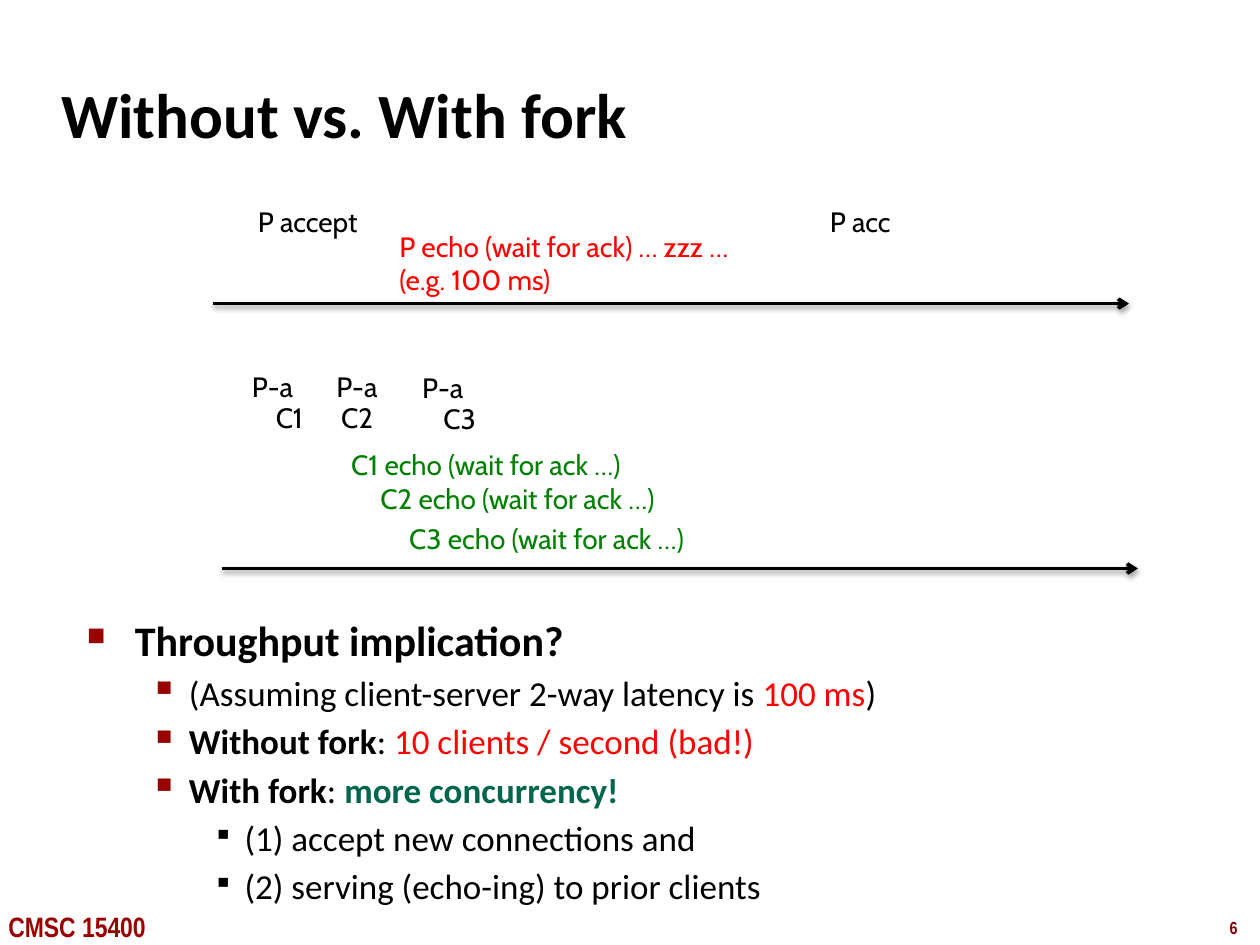
from dataclasses import dataclass
from pptx import Presentation
from pptx.dml.color import RGBColor
from pptx.enum.shapes import MSO_CONNECTOR
from pptx.enum.text import MSO_ANCHOR
from pptx.oxml import parse_xml
from pptx.oxml.ns import nsdecls
from pptx.util import Cm, Pt

BLACK, RED, GREEN = "000000", "FF0000", "008000"
MAROON, TEAL = "990000", "00664D"


@dataclass
class Label:
    text: str
    left: float
    top: float
    width: float
    height: float = 0.94
    color: str = BLACK
    size: float = 16
    font: str = "Cabin"
    bold: bool = False
    wrap: bool = True
    middle: bool = False


@dataclass
class Client:
    name: str
    accept: float
    child: float
    top: float
    echo: float
    low: float


@dataclass
class Level:
    margin: float
    hang: float
    char: str
    scale: int
    size: float
    color: str = BLACK


@dataclass
class Part:
    text: str
    color: str = BLACK
    bold: bool = False


LABELS = [
    Label("6", 24.54, 18.36, 0.86, 0.69, "800000", 10, "Arial Narrow", True, False),
    Label("CMSC 15400", -0.08, 18.21, 3.61, 0.94, MAROON, 16, "Arial Narrow", True, False),
    Label("Without vs. With fork", 0.99, 1.22, 21.08, 2.11, BLACK, 36, "Calibri", True, middle=True),
    Label("P accept", 4.95, 3.99, 3.71),
    Label("P echo (wait for ack) … zzz …\n(e.g. 100 ms)", 7.8, 4.5, 8.76, 1.63, RED),
    Label("P acc", 16.48, 3.99, 4.9),
]
CLIENTS = [
    Client("C1", 4.83, 5.31, 7.32, 6.83, 8.89),
    Client("C2", 6.53, 6.63, 7.32, 7.42, 9.58),
    Client("C3", 8.26, 8.69, 7.35, 8, 10.39),
]
LEVELS = [
    Level(0.97, 0.97, "■", 60, 24, MAROON),
    Level(2.06, 0.79, "▪", 110, 20, MAROON),
    Level(3.18, 0.64, "▪", 80, 20),
]
POINTS = [
    (0, [Part("Throughput implication?", bold=True)]),
    (1, [Part("(Assuming client-server 2-way latency is "), Part("100 ms", RED), Part(")")]),
    (1, [Part("Without fork", bold=True), Part(": "), Part("10 clients / second (bad!)", RED)]),
    (1, [Part("With fork", bold=True), Part(": "), Part("more concurrency!", TEAL, True)]),
    (2, [Part("(1) accept new connections and")]),
    (2, [Part("(2) serving (echo-ing) to prior clients")]),
]


def rgb(code: str) -> RGBColor:
    """Turn a hex string into a colour."""
    return RGBColor.from_string(code)


def style(run, font: str, size: float, color: str, bold: bool) -> None:
    """Format one run."""
    run.font.name = font
    run.font.size = Pt(size)
    run.font.bold = bold
    run.font.color.rgb = rgb(color)


def write(slide, label: Label) -> None:
    """Draw one label."""
    box = slide.shapes.add_textbox(
        Cm(label.left), Cm(label.top), Cm(label.width), Cm(label.height))
    frame = box.text_frame
    frame.word_wrap = label.wrap
    if label.middle:
        frame.vertical_anchor = MSO_ANCHOR.MIDDLE
    frame.text = label.text
    for para in frame.paragraphs:
        for run in para.runs:
            style(run, label.font, label.size, label.color, label.bold)


def arrow(slide, left: float, top: float, width: float = 18.47) -> None:
    """Draw a time line with an arrowhead and a soft shadow."""
    line = slide.shapes.add_connector(
        MSO_CONNECTOR.STRAIGHT, Cm(left), Cm(top), Cm(left + width), Cm(top))
    line.line.color.rgb = rgb(BLACK)
    line.line.width = Pt(2)
    line.line._get_or_add_ln().append(
        parse_xml(f'<a:tailEnd {nsdecls("a")} type="arrow"/>'))
    line._element.spPr.append(parse_xml(
        f'<a:effectLst {nsdecls("a")}>'
        '<a:outerShdw blurRad="40000" dist="20000" dir="5400000" rotWithShape="0">'
        f'<a:srgbClr val="{BLACK}"><a:alpha val="38000"/></a:srgbClr>'
        '</a:outerShdw></a:effectLst>'))


def bullet(para, level: Level) -> None:
    """Give a paragraph its indent and bullet."""
    props = para._p.get_or_add_pPr()
    props.set("marL", str(Cm(level.margin)))
    props.set("indent", str(-Cm(level.hang)))
    for item in (
        f'<a:buClr {nsdecls("a")}><a:srgbClr val="{level.color}"/></a:buClr>',
        f'<a:buSzPct {nsdecls("a")} val="{level.scale * 1000}"/>',
        f'<a:buChar {nsdecls("a")} char="{level.char}"/>',
    ):
        props.append(parse_xml(item))


def outline(slide) -> None:
    """Draw the bulleted points."""
    frame = slide.shapes.add_textbox(
        Cm(1.5), Cm(12.27), Cm(21.95), Cm(5.28)).text_frame
    frame.word_wrap = True
    for i, (depth, parts) in enumerate(POINTS):
        para = frame.add_paragraph() if i else frame.paragraphs[0]
        level = LEVELS[depth]
        para.level = depth
        bullet(para, level)
        para.space_before = Pt(3.6 if i else 0)
        for part in parts:
            run = para.add_run()
            run.text = part.text
            style(run, "Calibri", level.size, part.color, part.bold)


def main() -> None:
    """Build the slide and save it."""
    deck = Presentation()
    deck.slide_width, deck.slide_height = Cm(25.4), Cm(19.05)
    slide = deck.slides.add_slide(deck.slide_layouts[6])
    for label in LABELS:
        write(slide, label)
    for one in CLIENTS:
        write(slide, Label("P-a", one.accept, one.top, 2.13))
        write(slide, Label(one.name, one.child, one.top + 0.63, 1.4))
        write(slide, Label(f"{one.name} echo (wait for ack …)",
                           one.echo, one.low, 8.2, color=GREEN))
    arrow(slide, 4.29, 6.12)
    arrow(slide, 4.47, 11.46)
    outline(slide)
    deck.save("out.pptx")


if __name__ == "__main__":
    main()
